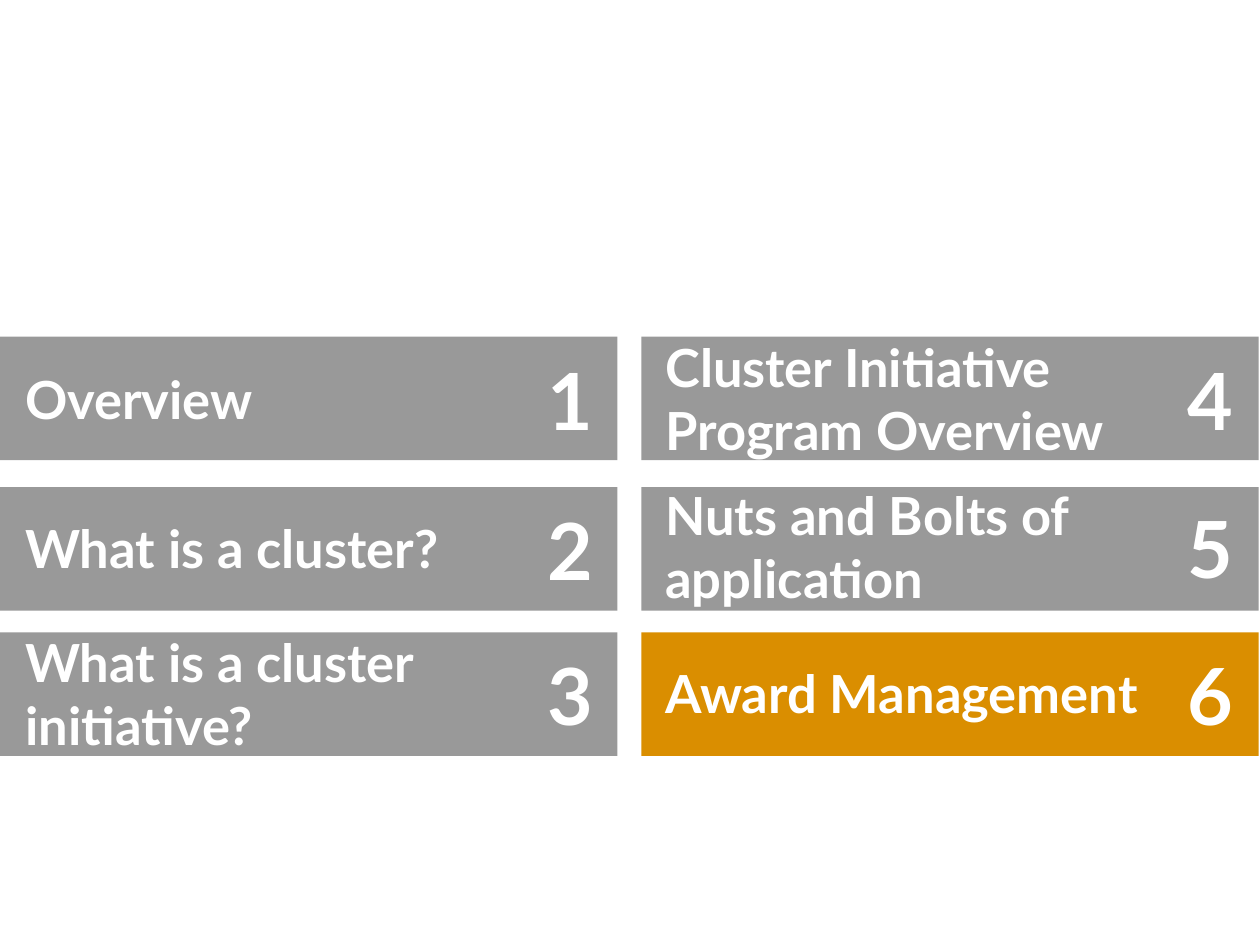
from lxml.etree import SubElement
from pptx import Presentation
from pptx.dml.color import RGBColor
from pptx.enum.shapes import MSO_SHAPE as Preset
from pptx.enum.text import MSO_ANCHOR as Anchor, MSO_AUTO_SIZE as AutoSize, PP_ALIGN as Align
from pptx.oxml.ns import qn
from pptx.util import Pt

# Layout, in points
COLUMN_LEFTS = (0, 366.5)
LABEL_LEFTS = (14.4, 380.2)
ROW_TOPS = (192.4, 278.3, 361.4)
CARD_WIDTH, CARD_HEIGHT = 352.8, 70.6
LABEL_WIDTH, LABEL_HEIGHT = 295.2, 40.3
NUMBER_WIDTH, NUMBER_HEIGHT = 26.6, 54.7
NUMBER_SHIFT = 298.1  # from label left to number left
NUMBER_RISE = 6.5  # from number top to label top

# Agenda entries by column: label and its top
AGENDA = (
    (("Overview", 207.4),
     ("What is a cluster?", 293),
     ("What is a cluster initiative?", 375.8)),
    (("Cluster Initiative Program Overview", 207.4),
     ("Nuts and Bolts of application", 291.6),
     ("Award Management", 375.8)),
)
CURRENT = 6


def color(value):
    return RGBColor.from_string(value)


def write(shape, text, size=30, font="Lato", ink="FFFFFF", bold=True, align=Align.LEFT):
    paragraph = shape.text_frame.paragraphs[0]
    paragraph.alignment = align
    run = paragraph.add_run()
    run.text = text
    run.font.size = Pt(size)
    run.font.name = font
    run.font.bold = bold
    run.font.color.rgb = color(ink)


class AgendaSlide:
    muted = "343434"
    muted_opacity = 50
    accent = "DA8E00"

    def __init__(self, presentation):
        self.slide = presentation.slides.add_slide(presentation.slide_layouts[6])

    def card(self, left, top, current):
        shape = self.slide.shapes.add_shape(
            Preset.RECTANGLE, Pt(left), Pt(top), Pt(CARD_WIDTH), Pt(CARD_HEIGHT))
        shape.shadow.inherit = False
        shape.line.fill.background()
        shape.fill.solid()
        shape.fill.fore_color.rgb = color(self.accent if current else self.muted)
        if not current:
            fill_color = shape.element.spPr.find(qn("a:solidFill"))[0]
            SubElement(fill_color, qn("a:alpha"), val=str(self.muted_opacity * 1000))

    def text(self, text, left, top, width, height, wrap=True, **style):
        box = self.slide.shapes.add_textbox(Pt(left), Pt(top), Pt(width), Pt(height))
        frame = box.text_frame
        frame.margin_left = frame.margin_right = frame.margin_top = frame.margin_bottom = 0
        frame.vertical_anchor = Anchor.MIDDLE
        frame.word_wrap = wrap
        frame.auto_size = AutoSize.NONE if wrap else AutoSize.SHAPE_TO_FIT_TEXT
        write(box, text, **style)

    def entry(self, number, label, left, top):
        self.text(label, left, top, LABEL_WIDTH, LABEL_HEIGHT)
        self.text(str(number), left + NUMBER_SHIFT, top - NUMBER_RISE,
                  NUMBER_WIDTH, NUMBER_HEIGHT, wrap=False, size=45, align=Align.RIGHT)


def main():
    presentation = Presentation()
    presentation.slide_width, presentation.slide_height = Pt(720), Pt(540)
    agenda = AgendaSlide(presentation)

    # Cards with their labels and numbers
    for column, entries in enumerate(AGENDA):
        for row, (label, label_top) in enumerate(entries):
            number = column * len(ROW_TOPS) + row + 1
            agenda.card(COLUMN_LEFTS[column], ROW_TOPS[row], number == CURRENT)
            agenda.entry(number, label, LABEL_LEFTS[column], label_top)

    presentation.save("out.pptx")


if __name__ == "__main__":
    main()
